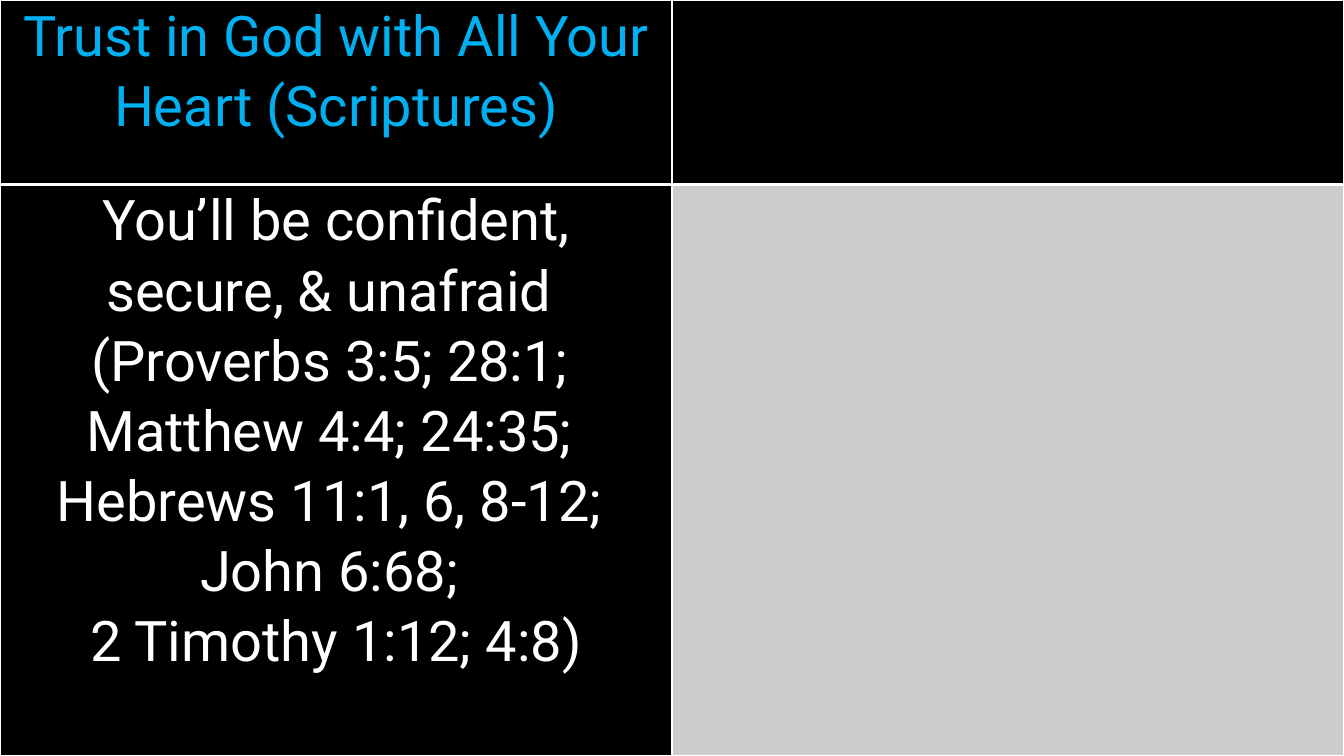
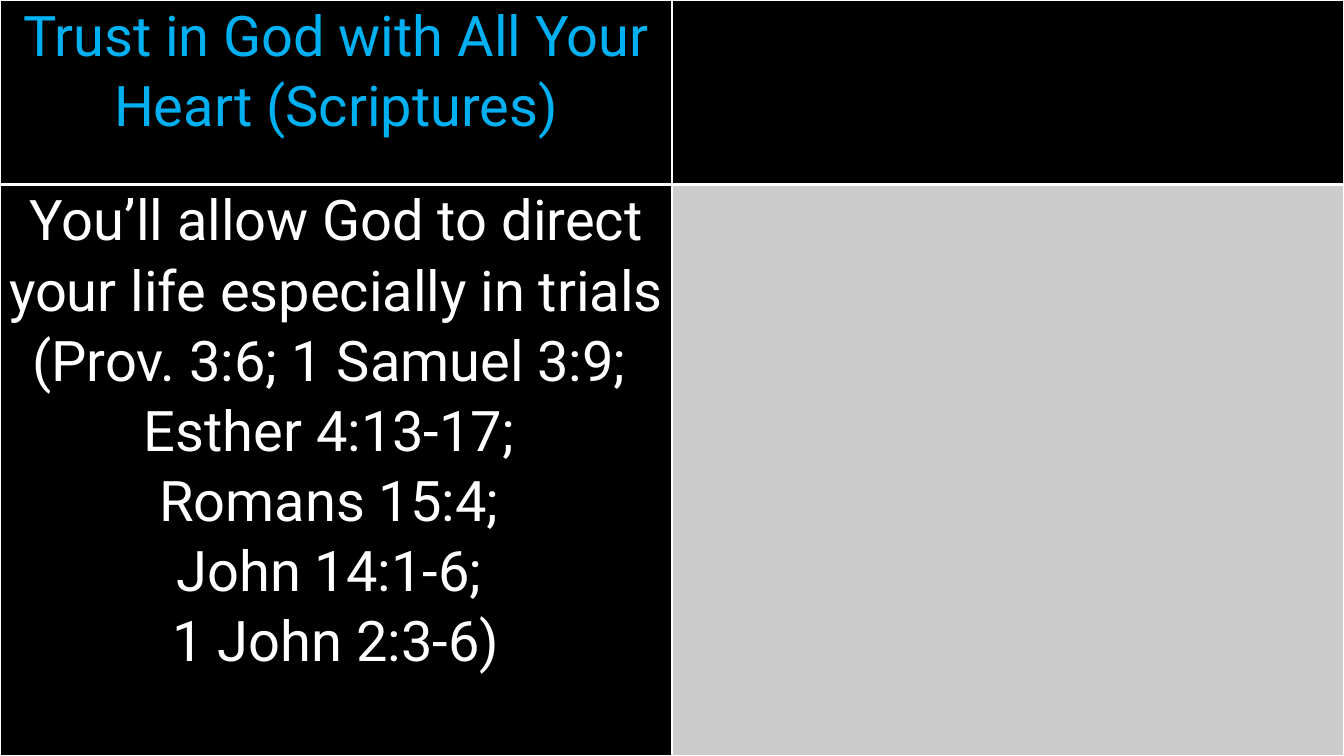
import pptx
import pptx.util
import pptx.dml.color
import pptx.enum.text
import pptx.oxml
import pptx.oxml.ns

HUES = {"black": "000000", "white": "FFFFFF", "blue": "00B0F0", "gray": "CCCCCC"}
TITLE = "Trust in God with All Your Heart (Scriptures)"
VERSES = [
    [
        "You’ll be confident, secure, & unafraid ",
        "(Proverbs 3:5; 28:1; ",
        "Matthew 4:4; 24:35; ",
        "Hebrews 11:1, 6, 8-12; ",
        "John 6:68; ",
        "2 Timothy 1:12; 4:8)",
    ],
    [
        "You’ll allow God to direct your life especially in trials (Prov. 3:6; 1 Samuel 3:9; ",
        "Esther 4:13-17; ",
        "Romans 15:4; ",
        "John 14:1-6; ",
        "1 John 2:3-6)",
    ],
]


def tint(name):
    return pptx.dml.color.RGBColor.from_string(HUES[name])


class Deck:
    font, size, lead = "Roboto", 40, 1.07
    cols, rows = (0.5, 0.5), (0.244, 0.756)
    thin, thick = 1, 3

    def __init__(self):
        self.file = pptx.Presentation()
        self.file.slide_width = pptx.util.Inches(13.33)
        self.file.slide_height = pptx.util.Inches(7.5)
        self.slide = None

    def page(self):
        self.slide = self.file.slides.add_slide(self.file.slide_layouts[6])
        fill = self.slide.background.fill
        fill.solid()
        fill.fore_color.rgb = tint("black")

    def grid(self):
        wide, high = self.file.slide_width, self.file.slide_height
        table = self.slide.shapes.add_table(
            len(self.rows), len(self.cols), 0, 0, wide, high
        ).table
        table.first_row = table.horz_banding = False
        for col, share in zip(table.columns, self.cols):
            col.width = int(wide * share)
        for row, share in zip(table.rows, self.rows):
            row.height = int(high * share)
        return table

    def edge(self, cell, side, width):
        line = pptx.oxml.parse_xml(
            f'<a:ln{side} {pptx.oxml.ns.nsdecls("a")} w="{pptx.util.Pt(width)}">'
            f'<a:solidFill><a:srgbClr val="{HUES["white"]}"/></a:solidFill>'
            f'<a:prstDash val="solid"/></a:ln{side}>'
        )
        cell._tc.get_or_add_tcPr().append(line)

    def cell(self, cell, back, top, base):
        for side, width in zip("LRTB", (self.thin, self.thin, top, base)):
            self.edge(cell, side, width)
        cell.fill.solid()
        cell.fill.fore_color.rgb = tint(back)
        cell.margin_left = cell.margin_right = pptx.util.Inches(0.07)
        cell.margin_top = cell.margin_bottom = 0

    def text(self, cell, lines, hue):
        frame = cell.text_frame
        for spot, line in enumerate(lines):
            para = frame.add_paragraph() if spot else frame.paragraphs[0]
            para.alignment = pptx.enum.text.PP_ALIGN.CENTER
            para.line_spacing = self.lead
            run = para.add_run()
            run.text = line
            run.font.name = self.font
            run.font.size = pptx.util.Pt(self.size)
            run.font.color.rgb = tint(hue)

    def board(self, title, lines):
        table = self.grid()
        backs = (("black", "black"), ("black", "gray"))
        rules = ((self.thin, self.thick), (self.thick, self.thin))
        for row, (pair, (top, base)) in enumerate(zip(backs, rules)):
            for col, back in enumerate(pair):
                self.cell(table.cell(row, col), back, top, base)
        self.text(table.cell(0, 0), [title], "blue")
        self.text(table.cell(1, 0), lines, "white")


def main():
    deck = Deck()
    for lines in VERSES:
        deck.page()
        deck.board(TITLE, lines)
    deck.file.save("out.pptx")


if __name__ == "__main__":
    main()
